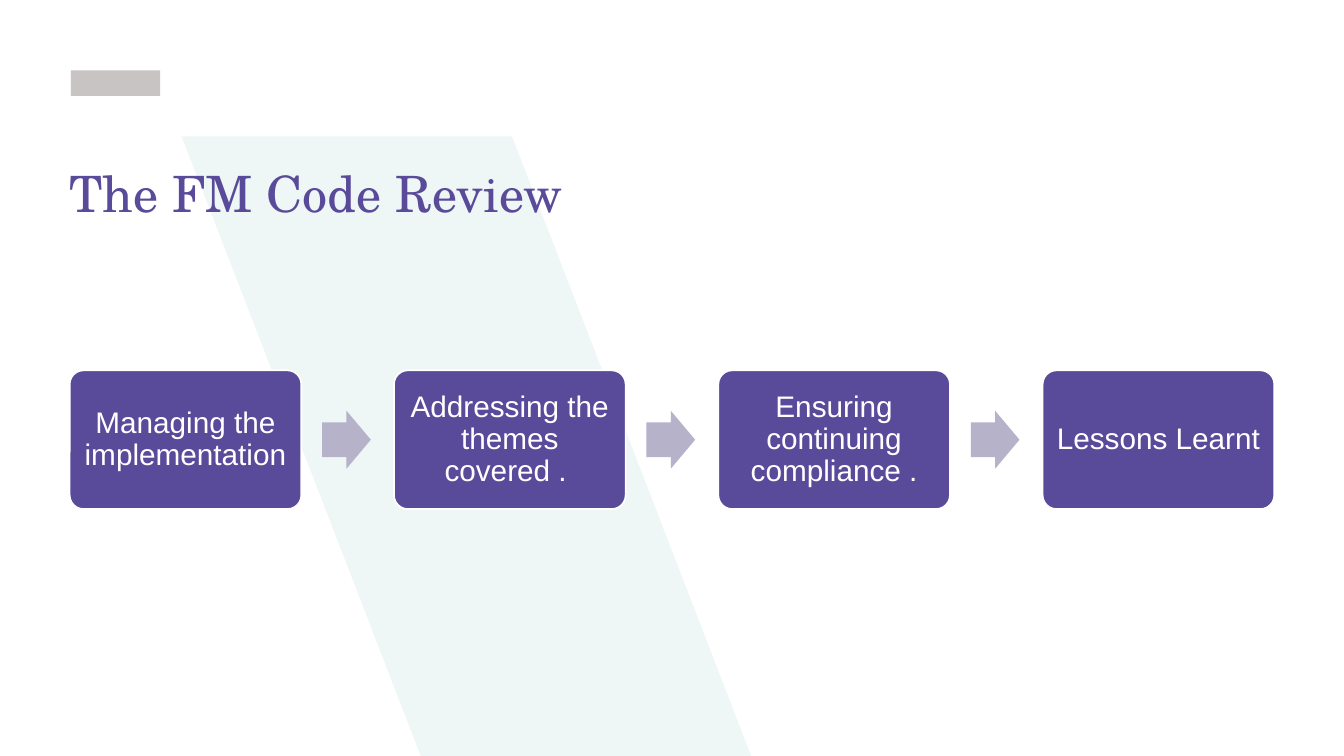
from pptx import Presentation
from pptx.dml.color import RGBColor
from pptx.enum import shapes as kinds, text as styles
from pptx.util import Inches, Pt

WIDTH, HEIGHT = 21.99, 12.37
PURPLE, LILAC, MINT, GREY, WHITE = "5A4B9A", "B5B2CA", "EEF7F5", "C7C4C3", "FFFFFF"
STEPS = [
    "Managing the implementation ",
    "Addressing the themes covered . ",
    "Ensuring continuing compliance .",
    "Lessons Learnt ",
]


def paint(part, fill, outline=None):
    """Give a shape a flat fill and an optional 2 pt outline."""
    part.shadow.inherit = False
    part.fill.solid()
    part.fill.fore_color.rgb = RGBColor.from_string(fill)
    if outline:
        part.line.color.rgb = RGBColor.from_string(outline)
        part.line.width = Pt(2)
    else:
        part.line.fill.background()
    return part


def write(part, wording, *, size, font, color, align, anchor, inset=0, spacing=1.0):
    """Write one formatted paragraph into a shape."""
    frame = part.text_frame
    frame.word_wrap = True
    frame.auto_size = styles.MSO_AUTO_SIZE.NONE
    frame.vertical_anchor = anchor
    frame.margin_left = frame.margin_right = Inches(inset)
    frame.margin_top = frame.margin_bottom = Inches(inset)
    paragraph = frame.paragraphs[0]
    paragraph.alignment, paragraph.line_spacing = align, spacing
    run = paragraph.add_run()
    run.text = wording
    run.font.size, run.font.name, run.font.bold = Pt(size), font, False
    run.font.color.rgb = RGBColor.from_string(color)


def add_preset(slide, preset, box, adjustments=()):
    """Add a preset shape in a box of inches."""
    part = slide.shapes.add_shape(preset, *map(Inches, box))
    for index, value in enumerate(adjustments):
        part.adjustments[index] = value
    return part


def add_backdrop(slide, box):
    """Draw the slanted band behind the content."""
    left, top, width, height = box
    near, far = 0.58 * width, 0.42 * width
    corners = [(near, 0), (0, 0), (far, height), (width, height)]
    points = [(Inches(left + x), Inches(top + y)) for x, y in corners]
    band = slide.shapes.build_freeform(*points[0])
    band.add_line_segments(points[1:], close=True)
    paint(band.convert_to_shape(), MINT)


def add_heading(slide, box):
    """Place the title placeholder in front of the parts drawn so far."""
    title = slide.shapes.title
    title.element.getparent().append(title.element)
    title.left, title.top, title.width, title.height = map(Inches, box)
    write(title, "The FM Code Review", size=59, font="TeX Gyre Schola", color=PURPLE,
          align=styles.PP_ALIGN.LEFT, anchor=styles.MSO_ANCHOR.TOP)


def add_process(slide, box, steps):
    """Lay out equal steps across the box with an arrow in each gap."""
    left, top, width, height = box
    step_width = width / (len(steps) + 0.4 * (len(steps) - 1))
    pitch = 1.4 * step_width
    arrow_width, arrow_height = 0.21 * step_width, 0.25 * step_width
    for index, wording in enumerate(steps):
        x = left + index * pitch
        if index:
            arrow_box = (x - 0.31 * step_width, top + (height - arrow_height) / 2,
                         arrow_width, arrow_height)
            paint(add_preset(slide, kinds.MSO_SHAPE.RIGHT_ARROW, arrow_box, (0.6, 0.5)), LILAC)
        step = add_preset(slide, kinds.MSO_SHAPE.ROUNDED_RECTANGLE,
                          (x, top, step_width, height), (0.1,))
        paint(step, PURPLE, WHITE)
        write(step, wording, size=35, font="Arial", color=WHITE, inset=0.15, spacing=0.9,
              align=styles.PP_ALIGN.CENTER, anchor=styles.MSO_ANCHOR.MIDDLE)


def main():
    """Build and save the slide."""
    deck = Presentation()
    deck.slide_width, deck.slide_height = Inches(WIDTH), Inches(HEIGHT)
    slide = deck.slides.add_slide(deck.slide_layouts[5])
    paint(add_preset(slide, kinds.MSO_SHAPE.RECTANGLE, (1.16, 1.15, 1.46, 0.42)), GREY)
    add_backdrop(slide, (2.97, 2.23, 9.32, HEIGHT - 2.23))
    add_heading(slide, (1.13, 2.65, 0.75 * WIDTH, 1.02))
    add_process(slide, (1.14, 6.06, 19.71, 2.27), STEPS)
    deck.save("out.pptx")


if __name__ == "__main__":
    main()
